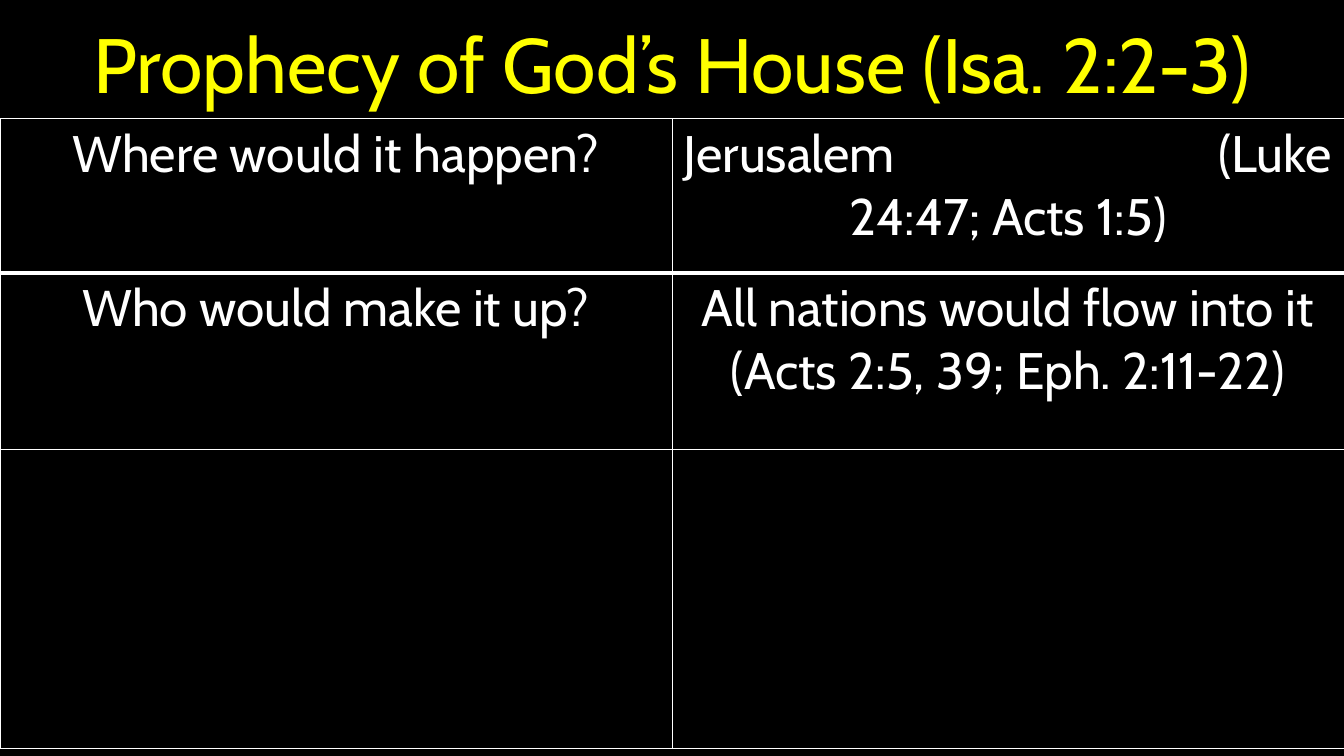
"""Build the slide on the prophecy of God's house with its question and answer table."""
from lxml import etree
from pptx import Presentation
from pptx.dml.color import RGBColor
from pptx.enum.text import MSO_ANCHOR, PP_ALIGN
from pptx.oxml.ns import qn
from pptx.util import Pt

COLORS = {"background": "000000", "title": "FFFF00", "text": "FFFFFF", "border": "FFFFFF"}
FONT = "Cabin"
ROWS = [
    (132, "Where would it happen?", "Jerusalem\t(Luke 24:47; Acts 1:5)"),
    (151, "Who would make it up?", "All nations would flow into it (Acts 2:5, 39; Eph. 2:11-22)"),
    (257, "", ""),
]
ANSWER_TAB = Pt(458.5)


def style_paragraph(paragraph, size, color):
    paragraph.alignment = PP_ALIGN.CENTER
    paragraph.font.size = Pt(size)
    for run in paragraph.runs:
        run.font.name = FONT
        run.font.size = Pt(size)
        run.font.color.rgb = RGBColor.from_string(COLORS[color])


def set_borders(cell, widths):
    properties = cell._tc.get_or_add_tcPr()
    for index, (side, width) in enumerate(widths.items()):
        line = etree.Element(qn(f"a:ln{side}"), w=str(Pt(width)))
        fill = etree.SubElement(line, qn("a:solidFill"))
        etree.SubElement(fill, qn("a:srgbClr"), val=COLORS["border"])
        properties.insert(index, line)


presentation = Presentation()
presentation.slide_width = Pt(1152)
presentation.slide_height = Pt(648)
slide = presentation.slides.add_slide(presentation.slide_layouts[6])
slide.background.fill.solid()
slide.background.fill.fore_color.rgb = RGBColor.from_string(COLORS["background"])

title = slide.shapes.add_textbox(Pt(0), Pt(0), Pt(1152), Pt(108))
title_frame = title.text_frame
title_frame.word_wrap = True
title_frame.vertical_anchor = MSO_ANCHOR.MIDDLE
title_frame.text = "Prophecy of God’s House (Isa. 2:2-3)"
style_paragraph(title_frame.paragraphs[0], 66, "title")

table = slide.shapes.add_table(len(ROWS), 2, Pt(0), Pt(102), Pt(1152), Pt(540)).table
table.first_row = False
table.horz_banding = False
for column in table.columns:
    column.width = Pt(576)

for row_index, (height, *texts) in enumerate(ROWS):
    table.rows[row_index].height = Pt(height)
    top = 3 if row_index == 1 else 1
    bottom = 3 if row_index == 0 else 1
    for column_index, text in enumerate(texts):
        cell = table.cell(row_index, column_index)
        cell.text_frame.text = text
        style_paragraph(cell.text_frame.paragraphs[0], 44, "text")
        cell.fill.solid()
        cell.fill.fore_color.rgb = RGBColor.from_string(COLORS["background"])
        set_borders(cell, {"L": 1, "R": 1, "T": top, "B": bottom})

answer = table.cell(0, 1).text_frame.paragraphs[0]
tab_list = etree.Element(qn("a:tabLst"))
etree.SubElement(tab_list, qn("a:tab"), pos=str(ANSWER_TAB), algn="l")
answer._p.get_or_add_pPr().insert(0, tab_list)

presentation.save("out.pptx")
